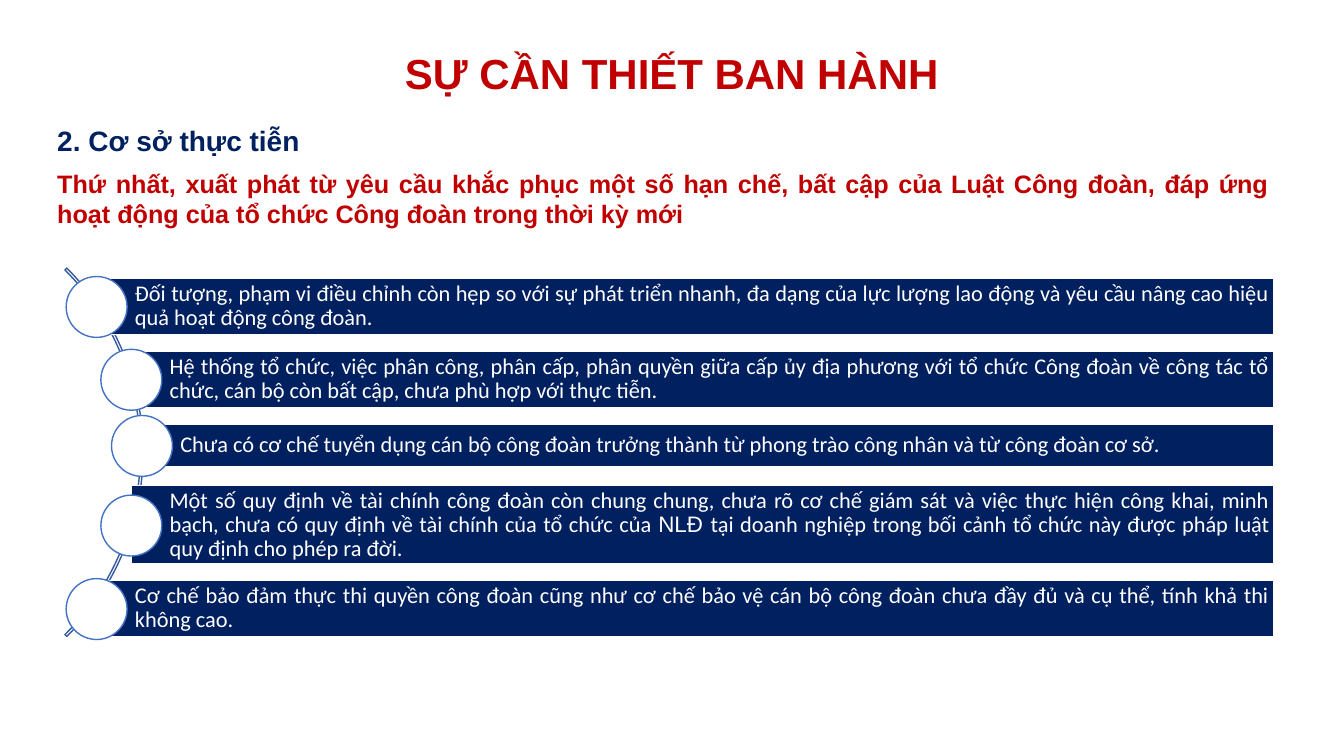
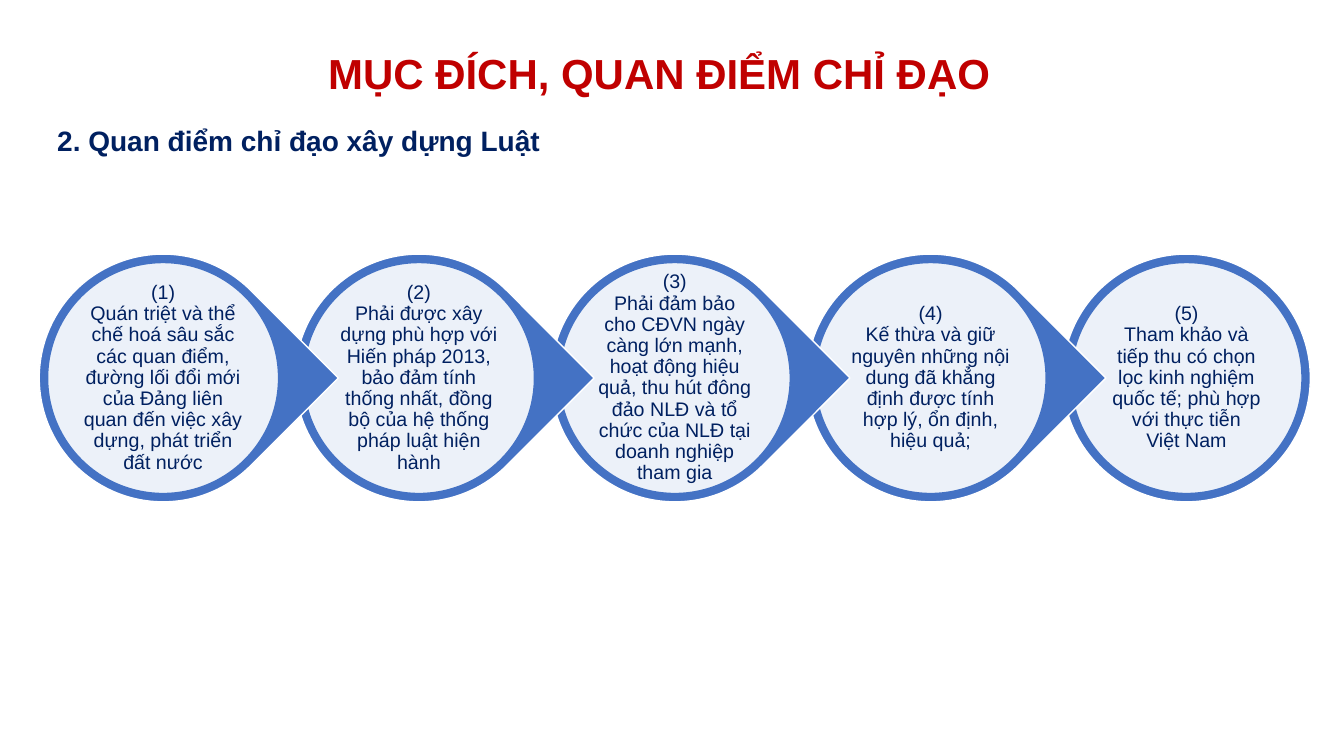
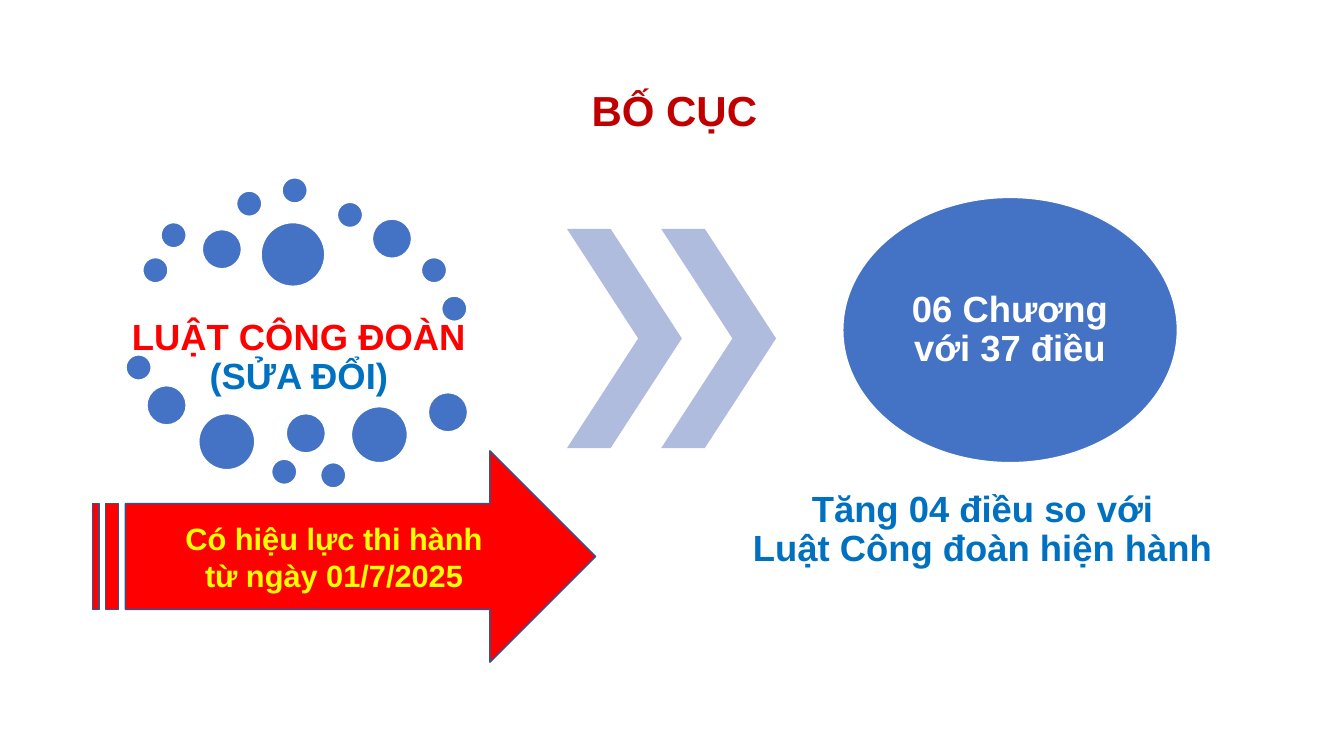
from lxml.etree import SubElement
from pptx import Presentation
from pptx.dml.color import RGBColor
from pptx.enum.shapes import MSO_SHAPE
from pptx.enum.text import MSO_ANCHOR, PP_ALIGN
from pptx.oxml.ns import qn
from pptx.util import Pt

# Shared look
NAVY, RED, BLUE, WHITE = "002060", "C00000", "4472C4", "FFFFFF"
BRIGHT_RED, SKY, YELLOW, PALE_BLUE = "FF0000", "0070C0", "FFFF00", "B0BCDE"
ARC_LINE, ARROW_LINE = "365B9D", "325491"
HEADING_FONT, BODY_FONT = "Arial", "Calibri"
DEFAULT_INSETS = (7.2, 3.6, 7.2, 3.6)

# Slide 1: top, height, left edge and text of each bar
SHORTCOMINGS = [
    (198.7, 40.3, 69, "Đối tượng, phạm vi điều chỉnh còn hẹp so với sự phát triển nhanh, đa dạng của "
     "lực lượng lao động và yêu cầu nâng cao hiệu quả hoạt động công đoàn."),
    (250.7, 40.3, 93.8, "Hệ thống tổ chức, việc phân công, phân cấp, phân quyền giữa cấp ủy địa phương "
     "với tổ chức Công đoàn về công tác tổ chức, cán bộ còn bất cập, chưa phù hợp với thực tiễn."),
    (303, 30.2, 101.4, "Chưa có cơ chế tuyển dụng cán bộ công đoàn trưởng thành từ phong trào công nhân "
     "và từ công đoàn cơ sở."),
    (347, 56, 93.8, "Một số quy định về tài chính công đoàn còn chung chung, chưa rõ cơ chế giám sát và "
     "việc thực hiện công khai, minh bạch, chưa có quy định về tài chính của tổ chức của "),
    (414.5, 40.3, 69, "Cơ chế bảo đảm thực thi quyền công đoàn cũng như cơ chế bảo vệ cán bộ công đoàn "
     "chưa đầy đủ và cụ thể, tính khả thi không cao."),
]

# Slide 2: guiding principles, left to right
PRINCIPLES = [
    "Quán triệt và thể chế hoá sâu sắc các quan điểm, đường lối đổi mới của Đảng liên quan đến "
    "việc xây dựng, phát triển đất nước",
    "Phải được xây dựng phù hợp với Hiến pháp 2013, bảo đảm tính thống nhất, đồng bộ của hệ thống "
    "pháp luật hiện hành",
    "Phải đảm bảo\ncho CĐVN ngày càng lớn mạnh, hoạt động hiệu quả, thu hút đông đảo NLĐ và tổ chức "
    "của NLĐ tại doanh nghiệp tham gia",
    "Kế thừa và giữ nguyên những nội dung đã khẳng định được tính hợp lý, ổn định, hiệu quả;",
    "Tham khảo và tiếp thu có chọn lọc kinh nghiệm quốc tế; phù hợp với thực tiễn\nViệt Nam",
]

# Slide 3: dot positions by diameter, relative to the cluster
DOTS = {
    18: [(36, 57), (49, 32), (103, 9.5), (135.5, 0), (175, 17.5), (235, 57), (249.5, 84.5),
         (24, 126.5), (128, 201), (163, 203.5)],
    28: [(78.5, 37), (200, 29.5), (39, 148.5), (138.5, 168.5), (240, 153.5)],
    40: [(76, 168.5), (185, 163.5)],
    45.5: [(120.5, 32)],
}


def rgb(hex_code):
    return RGBColor.from_string(hex_code)


def add_figure(slide, kind, box, fill=None, line=None):
    """Preset shape; box is left, top, width, height."""
    figure = slide.shapes.add_shape(kind, *map(Pt, box))
    figure.shadow.inherit = False
    if fill:
        figure.fill.solid()
        figure.fill.fore_color.rgb = rgb(fill)
    else:
        figure.fill.background()
    if line:
        figure.line.color.rgb = rgb(line)
        figure.line.width = Pt(1)
    else:
        figure.line.fill.background()
    return figure


def set_opacity(figure, percent):
    color = figure.fill._xPr.find(qn("a:solidFill"))[0]
    SubElement(color, qn("a:alpha")).set("val", str(percent * 1000))


def put_text(holder, paragraphs, size, color, bold=True, font=HEADING_FONT,
             align=PP_ALIGN.CENTER, spacing=0.9, anchor=MSO_ANCHOR.MIDDLE, insets=DEFAULT_INSETS):
    frame = holder.text_frame
    frame.word_wrap = True
    frame.vertical_anchor = anchor
    frame.margin_left, frame.margin_top, frame.margin_right, frame.margin_bottom = map(Pt, insets)
    for index, text in enumerate(paragraphs):
        paragraph = frame.add_paragraph() if index else frame.paragraphs[0]
        paragraph.text = text
        paragraph.alignment = align
        paragraph.line_spacing = spacing
        for run in paragraph.runs:
            format_run(run, size, color, bold, font)


def format_run(run, size, color, bold, font):
    run.font.size = Pt(size)
    run.font.color.rgb = rgb(color)
    run.font.bold = bold
    run.font.name = font


def append_run(holder, text, *look):
    run = holder.text_frame.paragraphs[0].add_run()
    run.text = text
    format_run(run, *look)


def add_label(slide, box, text, size, color, **look):
    label = slide.shapes.add_textbox(*map(Pt, box))
    put_text(label, [text], size, color, **look)
    return label


def add_title(slide, box, text):
    add_label(slide, box, text, 30, RED)


def add_heading(slide, top, height, text, size, color, align=PP_ALIGN.LEFT):
    add_label(slide, (33.8, top, 880, height), text, size, color,
              align=align, spacing=1, anchor=MSO_ANCHOR.TOP)


def add_shortcoming(slide, box, text):
    """Bar with a circle centred on its left edge."""
    left, top, _, height = box
    diameter = 43.5
    bar = add_figure(slide, MSO_SHAPE.RECTANGLE, box, NAVY, WHITE)
    put_text(bar, [text], 16, WHITE, bold=False, font=BODY_FONT,
             align=PP_ALIGN.JUSTIFY, insets=(27.4, 2.9, 2.9, 2.9))
    add_figure(slide, MSO_SHAPE.OVAL,
               (left - diameter / 2, top + (height - diameter) / 2 + 0.4, diameter, diameter),
               WHITE, BLUE)
    return bar


def add_principle(slide, left, top, number, text, is_last):
    """Drop pointing right, with a pale disc that holds the text."""
    diameter, rim = 177, 6
    kind = MSO_SHAPE.OVAL if is_last else MSO_SHAPE.TEAR
    drop = add_figure(slide, kind, (left, top, diameter, diameter), BLUE, WHITE)
    if not is_last:
        drop.rotation = 45
    inner = diameter - 2 * rim
    disc = add_figure(slide, MSO_SHAPE.OVAL, (left + rim, top + rim, inner, inner), WHITE, BLUE)
    set_opacity(disc, 90)
    put_text(disc, [f"({number})", text], 14, NAVY, bold=False, insets=(0.75,) * 4)


def add_dot_cluster(slide, left, top):
    law = add_label(slide, (left, top + 83.5, 295, 91), "LUẬT CÔNG ĐOÀN ", 26, BRIGHT_RED,
                    insets=(2.6,) * 4)
    append_run(law, "(SỬA ĐỔI)", 26, SKY, True, HEADING_FONT)
    for diameter, places in DOTS.items():
        for x, y in places:
            add_figure(slide, MSO_SHAPE.OVAL, (left + x, top + y, diameter, diameter), BLUE, WHITE)


def add_chevrons(slide, left, top):
    for index in range(2):
        chevron = add_figure(slide, MSO_SHAPE.CHEVRON, (left + index * 67.3, top, 82, 156.5), PALE_BLUE)
        chevron.adjustments[0] = 0.62


def build_need_slide(slide):
    add_title(slide, (66, 31.5, 828, 45.5), "SỰ CẦN THIẾT BAN HÀNH")
    add_heading(slide, 85, 31.5, "2. Cơ sở thực tiễn", 20, NAVY)
    add_heading(slide, 116.5, 51, "Thứ nhất, xuất phát từ yêu cầu khắc phục một số hạn chế, bất cập của "
                "Luật Công đoàn, đáp ứng hoạt động của tổ chức Công đoàn trong thời kỳ mới",
                18, RED, PP_ALIGN.JUSTIFY)
    # Arc behind the bars
    arc = add_figure(slide, MSO_SHAPE.BLOCK_ARC, (-270, 137, 372.2, 372.2), line=ARC_LINE)
    for index, value in enumerate((189, 27, 0.005)):
        arc.adjustments[index] = value
    # Bars share one right edge
    right = 910
    bars = [add_shortcoming(slide, (left, top, right - left, height), text)
            for top, height, left, text in SHORTCOMINGS]
    append_run(bars[3], "NLĐ ", 16, WHITE, False, HEADING_FONT)
    append_run(bars[3], "tại doanh nghiệp trong bối cảnh tổ chức này được pháp luật quy định cho phép "
               "ra đời.", 16, WHITE, False, BODY_FONT)


def build_principles_slide(slide):
    add_title(slide, (48, 31.5, 846, 45.5), "MỤC ĐÍCH, QUAN ĐIỂM CHỈ ĐẠO")
    add_heading(slide, 85, 31.5, "2. Quan điểm chỉ đạo xây dựng Luật", 20, NAVY)
    # Drawn from the right, so each tip lies over the next drop
    count = len(PRINCIPLES)
    for number in range(count, 0, -1):
        add_principle(slide, 28 + (number - 1) * 182.75, 181.5, number,
                      PRINCIPLES[number - 1], number == count)


def build_layout_slide(slide):
    add_dot_cluster(slide, 66, 127)
    add_chevrons(slide, 405, 163.5)
    # Number of chapters and articles
    chapters = add_figure(slide, MSO_SHAPE.OVAL, (602, 141, 239, 189.5), BLUE, WHITE)
    put_text(chapters, ["06 Chương với 37 điều"], 26, WHITE, insets=(0,) * 4)
    add_label(slide, (510.5, 337, 383, 83), "Tăng 04 điều so với\nLuật Công đoàn hiện hành", 26, SKY,
              insets=(2.6,) * 4)
    add_label(slide, (312.5, 57, 338.5, 44), "BỐ CỤC", 30, RED, spacing=1, anchor=MSO_ANCHOR.TOP)
    # Date of effect
    effect = add_figure(slide, MSO_SHAPE.STRIPED_RIGHT_ARROW, (66, 322, 359.5, 151),
                        BRIGHT_RED, ARROW_LINE)
    put_text(effect, ["Có hiệu lực thi hành\ntừ ngày 01/7/2025"], 22, YELLOW, spacing=1)


def main():
    deck = Presentation()
    deck.slide_width, deck.slide_height = Pt(960), Pt(540)
    for build in (build_need_slide, build_principles_slide, build_layout_slide):
        build(deck.slides.add_slide(deck.slide_layouts[6]))
    deck.save("out.pptx")


if __name__ == "__main__":
    main()
